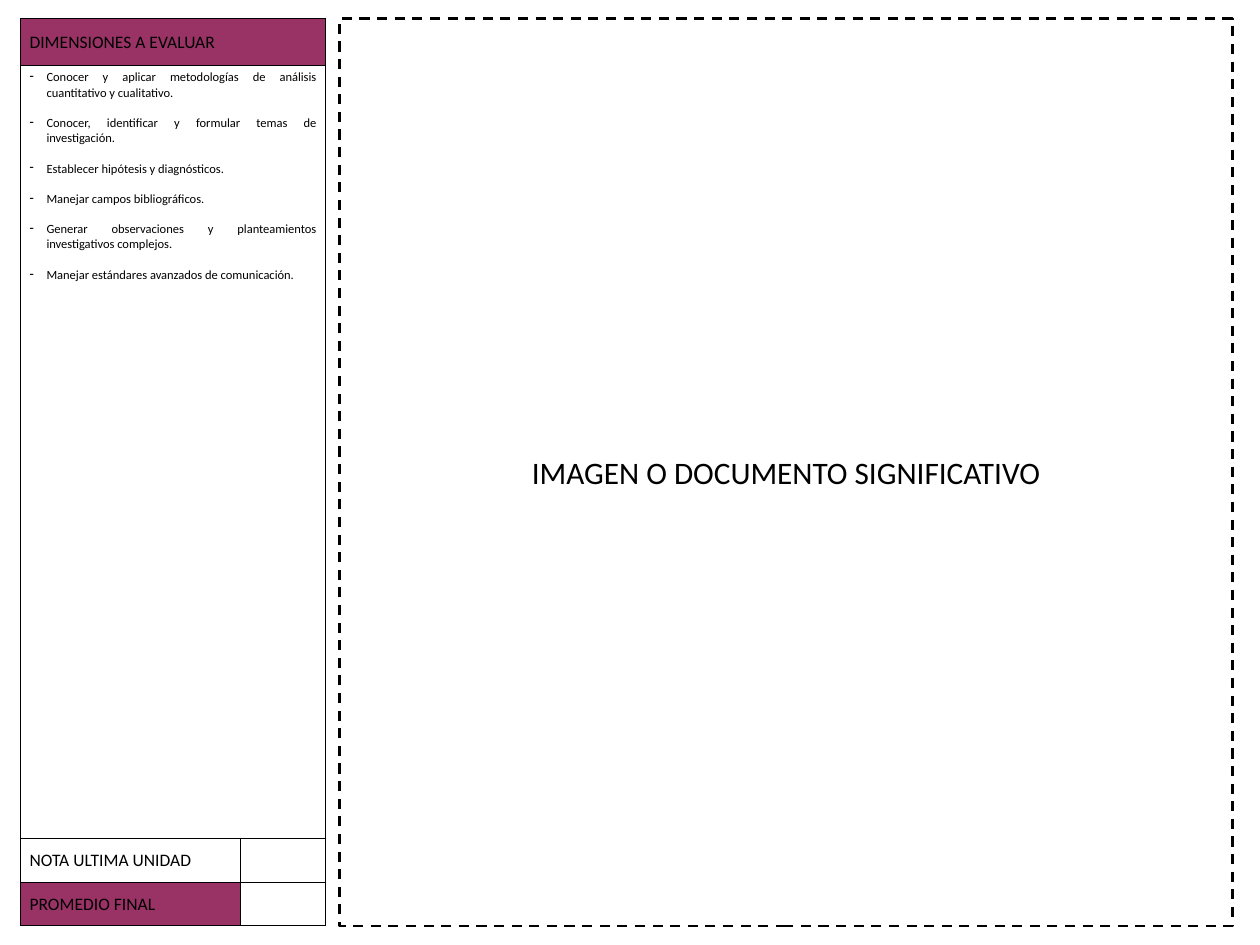
"""Build the evaluation slide: a grading table beside a frame for a key document."""
from lxml.etree import SubElement
from pptx import Presentation
from pptx.dml.color import RGBColor
from pptx.enum.dml import MSO_LINE
from pptx.enum.shapes import MSO_SHAPE
from pptx.enum.text import MSO_ANCHOR, PP_ALIGN
from pptx.oxml import parse_xml
from pptx.oxml.ns import nsdecls, qn
from pptx.util import Cm, Pt

BLACK = RGBColor(0x00, 0x00, 0x00)
WHITE = RGBColor(0xFF, 0xFF, 0xFF)
PLUM = RGBColor(0x99, 0x33, 0x66)

TOP, HEIGHT = Cm(0.53), Cm(25.6)
COL_WIDTHS = (6.2, 2.4)
ROW_HEIGHTS = (1.32, 21.82, 1.24, 1.22)
DIMENSIONS = (
    "Conocer y aplicar metodologías de análisis cuantitativo y cualitativo.",
    "Conocer, identificar y formular temas de investigación.",
    "Establecer hipótesis y diagnósticos.",
    "Manejar campos bibliográficos.",
    "Generar observaciones y planteamientos investigativos complejos.",
    "Manejar estándares avanzados de comunicación.",
)


def set_attrs(obj, values):
    """Set every attribute named in a dict."""
    for name, value in values.items():
        setattr(obj, name, value)


def add_text(p, text, size, align):
    """Write one formatted run into a paragraph."""
    p.alignment = align
    r = p.add_run()
    r.text = text
    set_attrs(r.font, {"name": "Calibri", "size": Pt(size)})
    r.font.color.rgb = BLACK


def add_bullet(p):
    """Give a paragraph a hanging dash."""
    pPr = p._p.get_or_add_pPr()
    pPr.set("marL", str(Cm(0.48)))
    pPr.set("indent", str(-Cm(0.48)))
    SubElement(pPr, qn("a:buChar")).set("char", "-")


def set_borders(cell, widths):
    """Draw cell edges from a dict of edge letter to width in points."""
    tcPr = cell._tc.get_or_add_tcPr()
    for i, (edge, width) in enumerate(widths.items()):
        tcPr.insert(i, parse_xml(
            f'<a:ln{edge} {nsdecls("a")} w="{Pt(width)}"><a:solidFill>'
            f'<a:srgbClr val="{BLACK}"/></a:solidFill></a:ln{edge}>'))


def fill_cell(cell, color):
    """Fill a cell, or leave it clear when no colour is given."""
    if color is None:
        cell.fill.background()
    else:
        cell.fill.solid()
        cell.fill.fore_color.rgb = color


def add_label(cell, text, color):
    """Write a filled heading cell."""
    fill_cell(cell, color)
    cell.vertical_anchor = MSO_ANCHOR.MIDDLE
    add_text(cell.text_frame.paragraphs[0], text, 14, PP_ALIGN.JUSTIFY)


def add_dimensions(cell):
    """List the evaluated dimensions in a cell."""
    tf = cell.text_frame
    for i, text in enumerate(DIMENSIONS):
        p = tf.add_paragraph() if i else tf.paragraphs[0]
        add_text(p, text, 10, PP_ALIGN.JUSTIFY)
        if i:
            p.space_before = Pt(12.2)
        add_bullet(p)


def add_grades(s):
    """Add the table of dimensions and grades."""
    rows, cols = len(ROW_HEIGHTS), len(COL_WIDTHS)
    table = s.shapes.add_table(rows, cols, Cm(0.58), TOP,
                               Cm(sum(COL_WIDTHS)), HEIGHT).table
    set_attrs(table, {"first_row": False, "horz_banding": False})
    for col, width in zip(table.columns, COL_WIDTHS):
        col.width = Cm(width)
    for row, height in zip(table.rows, ROW_HEIGHTS):
        row.height = Cm(height)
    for i in (0, 1):
        table.cell(i, 0).merge(table.cell(i, 1))
    for cell in table.iter_cells():
        fill_cell(cell, None)
    add_label(table.cell(0, 0), "DIMENSIONES A EVALUAR", PLUM)
    add_dimensions(table.cell(1, 0))
    add_label(table.cell(2, 0), "NOTA ULTIMA UNIDAD", WHITE)
    add_label(table.cell(3, 0), "PROMEDIO FINAL", PLUM)
    for i in range(rows):
        for j in range(cols):
            cell = table.cell(i, j)
            widths = {"L": 0.5 if j else 1,
                      "R": 1 if j or cell.is_merge_origin else 0.5,
                      "T": 1 if i in (1, 2) else 0.5,
                      "B": 0.5 if i == 2 else 1}
            if cell.is_spanned:
                del widths["L"]
            set_borders(cell, widths)


def add_frame(s):
    """Add the dashed frame for the key image or document."""
    sp = s.shapes.add_shape(MSO_SHAPE.RECTANGLE, Cm(9.58), TOP, Cm(25.2), HEIGHT)
    sp.shadow.inherit = False
    sp.fill.background()
    sp.line.color.rgb = BLACK
    set_attrs(sp.line, {"width": Pt(2), "dash_style": MSO_LINE.DASH})
    tf = sp.text_frame
    set_attrs(tf, {"word_wrap": True, "vertical_anchor": MSO_ANCHOR.MIDDLE})
    add_text(tf.paragraphs[0], "IMAGEN O DOCUMENTO SIGNIFICATIVO", 25,
             PP_ALIGN.CENTER)


def main():
    """Build and save the slide."""
    prs = Presentation()
    set_attrs(prs, {"slide_width": Cm(35.56), "slide_height": Cm(26.67)})
    s = prs.slides.add_slide(prs.slide_layouts[6])
    add_frame(s)
    add_grades(s)
    prs.save("out.pptx")


if __name__ == "__main__":
    main()
